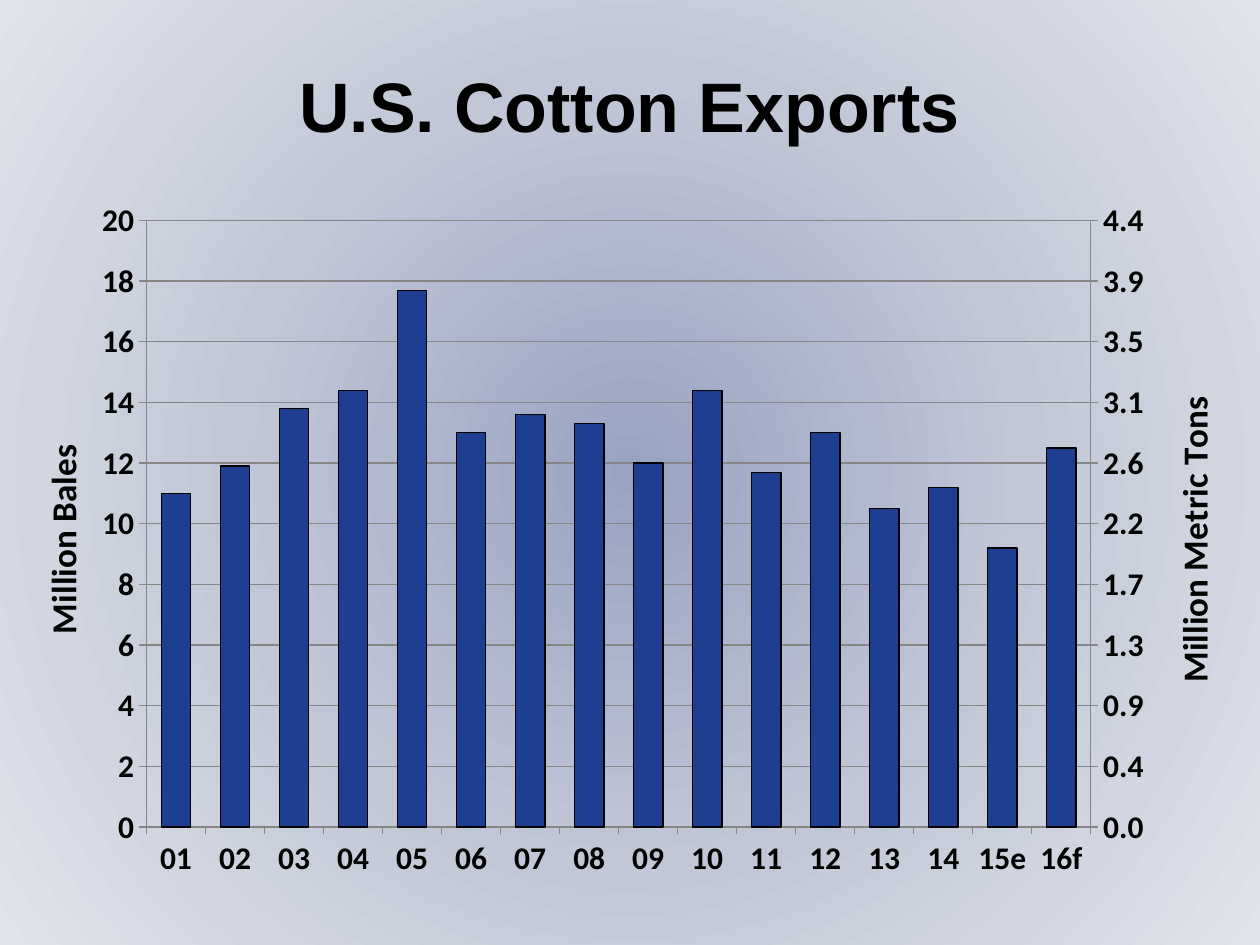
from copy import deepcopy

from pptx import Presentation, util as u
from pptx.chart import axis as ax, data as cd
from pptx.dml.color import RGBColor
from pptx.enum import chart as ch, text
from pptx.oxml import parse_xml
from pptx.oxml.ns import nsdecls, qn

YEARS = [f"{n:02d}" for n in range(1, 15)] + ["15e", "16f"]
BALES = [11, 11.9, 13.8, 14.4, 17.7, 13, 13.6, 13.3,
         12, 14.4, 11.7, 13, 10.5, 11.2, 9.2, 12.5]
TONS = [2.4, 2.6, 3, 3.1, 3.9, 2.8, 3, 2.9,
        2.6, 3.1, 2.6, 2.8, 2.3, 2.5, 2, 2.7]
TOP = 4.3573


def hue(code):
    """Turn a hex string into a colour."""
    return RGBColor.from_string(code)


def style(font, size, name):
    """Make a font bold black in the given size and face."""
    font.size, font.name, font.bold = u.Pt(size), name, True
    font.color.rgb = hue("000000")


def paint(slide, stops):
    """Fill the background with a gradient spreading from the centre."""
    slide.background.fill.solid()
    old = next(slide.background._cSld.iter(qn("a:solidFill")))
    marks = "".join(f'<a:gs pos="{pos * 1000}"><a:srgbClr val="{code}"/></a:gs>'
                    for pos, code in stops)
    mid = 'l="50000" t="50000" r="50000" b="50000"'
    new = parse_xml(f'<a:gradFill {nsdecls("a")} rotWithShape="1"><a:gsLst>{marks}</a:gsLst>'
                    f'<a:path path="circle"><a:fillToRect {mid}/></a:path></a:gradFill>')
    old.getparent().replace(old, new)


def title(slide, box, words):
    """Place the centred heading in the box."""
    frame = slide.shapes.add_textbox(*map(u.Cm, box)).text_frame
    frame.word_wrap = True
    frame.vertical_anchor = text.MSO_ANCHOR.MIDDLE
    frame.text = words
    para = frame.paragraphs[0]
    para.alignment = text.PP_ALIGN.CENTER
    style(para.runs[0].font, 40, "Arial")


def scale(axis, words, form, top, step):
    """Set the title, number format and range of a value axis."""
    axis.minimum_scale, axis.maximum_scale, axis.major_unit = 0, top, step
    axis.tick_labels.number_format = form
    axis.tick_labels.number_format_is_linked = False
    frame = axis.axis_title.text_frame
    frame.text = words
    style(frame.paragraphs[0].runs[0].font, 20, "Calibri")


def trim(axis):
    """Give an axis its outside ticks and grey line."""
    axis.major_tick_mark = ch.XL_TICK_MARK.OUTSIDE
    axis.minor_tick_mark = ch.XL_TICK_MARK.NONE
    axis.format.line.color.rgb = hue("868686")


def split(chart):
    """Move the last series to a second pair of axes and return the right one."""
    plot = chart._chartSpace.chart.plotArea
    bar, cat, val = (plot.find(qn(tag)) for tag in ("c:barChart", "c:catAx", "c:valAx"))
    bar2, cat2, val2 = map(deepcopy, (bar, cat, val))
    bar.remove(bar.findall(qn("c:ser"))[1])
    bar2.remove(bar2.findall(qn("c:ser"))[0])
    for node, ids in ((bar2, ("9001", "9002")), (cat2, ("9001",)), (val2, ("9002",))):
        for item, key in zip(node.findall(qn("c:axId")), ids):
            item.set("val", key)
    cat2.find(qn("c:crossAx")).set("val", "9002")
    val2.find(qn("c:crossAx")).set("val", "9001")
    val2.find(qn("c:axPos")).set("val", "r")
    val2.find(qn("c:crosses")).set("val", "max")
    bar.addnext(bar2)
    val.addnext(val2)
    val2.addnext(cat2)
    ax.CategoryAxis(cat2).visible = False
    right = ax.ValueAxis(val2)
    right.has_major_gridlines = False
    return right


def frame(chart, spot):
    """Fix the inner plot area at the given fractions of the chart."""
    plot = chart._chartSpace.chart.plotArea
    for old in plot.findall(qn("c:layout")):
        plot.remove(old)
    sizes = "".join(f'<c:{key} val="{val}"/>' for key, val in zip("xywh", spot))
    plot.insert(0, parse_xml(
        f'<c:layout {nsdecls("c")}><c:manualLayout><c:layoutTarget val="inner"/>'
        f'<c:xMode val="edge"/><c:yMode val="edge"/>{sizes}</c:manualLayout></c:layout>'))


def graph(slide, box):
    """Draw the exports in bales, with metric tons on the right axis."""
    data = cd.CategoryChartData()
    data.categories = YEARS
    data.add_series("Bales", BALES)
    data.add_series("Metric Tons", TONS)
    kind = ch.XL_CHART_TYPE.COLUMN_CLUSTERED
    chart = slide.shapes.add_chart(kind, *map(u.Cm, box), data).chart
    chart.has_legend = chart.has_title = False
    style(chart.font, 18, "Calibri")
    plot = chart.plots[0]
    plot.gap_width, plot.vary_by_categories = 100, False
    bales, tons = plot.series
    bales.format.fill.solid()
    bales.format.fill.fore_color.rgb = hue("1E3E92")
    bales.format.line.color.rgb = hue("000000")
    bales.format.line.width = u.Pt(0.75)
    tons.format.fill.background()
    tons.format.line.fill.background()
    left, base = chart.value_axis, chart.category_axis
    base.tick_label_position = ch.XL_TICK_LABEL_POSITION.LOW
    trim(base)
    trim(left)
    left.major_gridlines.format.line.color.rgb = hue("868686")
    right = split(chart)
    scale(left, "Million Bales", "#,##0", 20, 2)
    scale(right, "Million Metric Tons", "#,##0.0", TOP, TOP / 10)
    frame(chart, (0.096, 0.097, 0.79, 0.804))


def main():
    """Build the slide and save it."""
    deck = Presentation()
    deck.slide_width, deck.slide_height = u.Cm(25.4), u.Cm(19.05)
    slide = deck.slides.add_slide(deck.slide_layouts[6])
    paint(slide, [(0, "98A3C1"), (50, "C2C7D7"), (100, "E1E4EB")])
    title(slide, (0.64, 0.84, 24.1, 2.54), "U.S. Cotton Exports")
    graph(slide, (0.64, 2.97, 24.1, 15.21))
    deck.save("out.pptx")


if __name__ == "__main__":
    main()
